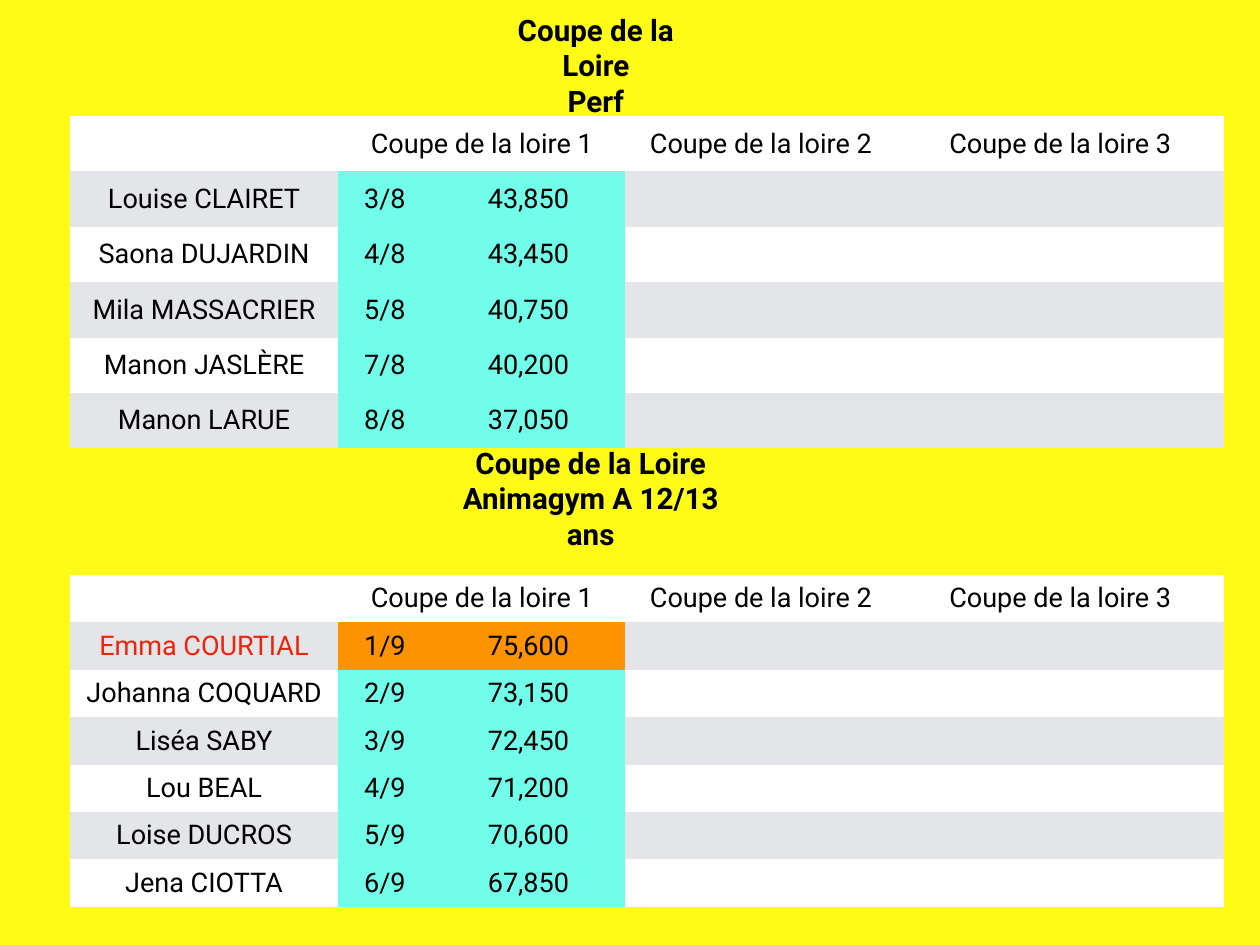
"""Build the Coupe de la Loire results slide with its two ranking tables."""
from pptx import Presentation
from pptx.dml.color import RGBColor
from pptx.enum.text import MSO_AUTO_SIZE as Fit, MSO_VERTICAL_ANCHOR as Anchor, PP_ALIGN as Align
from pptx.oxml.ns import qn
from pptx.util import Cm, Pt

YELLOW = RGBColor(0xFF, 0xFB, 0x17)
BLACK = RGBColor(0x00, 0x00, 0x00)
WHITE = RGBColor(0xFF, 0xFF, 0xFF)
GREY = RGBColor(0xE3, 0xE5, 0xE8)
AQUA = RGBColor(0x72, 0xFD, 0xEA)
ORANGE = RGBColor(0xFE, 0x93, 0x01)
RED = RGBColor(0xEE, 0x23, 0x0C)

NO_GRID = "{2D5ABB26-0587-4C30-8999-92F81FD0307C}"
COLUMNS = (7.7, 2.67, 5.56, 3.81, 3.96, 2.74, 6.65)
ROUNDS = ("Coupe de la loire 1", "Coupe de la loire 2", "Coupe de la loire 3")
PERF = (
    ("Louise CLAIRET", "3/8", "43,850"),
    ("Saona DUJARDIN", "4/8", "43,450"),
    ("Mila MASSACRIER", "5/8", "40,750"),
    ("Manon JASLÈRE", "7/8", "40,200"),
    ("Manon LARUE", "8/8", "37,050"),
)
ANIMAGYM = (
    ("Emma COURTIAL", "1/9", "75,600"),
    ("Johanna COQUARD", "2/9", "73,150"),
    ("Liséa SABY", "3/9", "72,450"),
    ("Lou BEAL", "4/9", "71,200"),
    ("Loise DUCROS", "5/9", "70,600"),
    ("Jena CIOTTA", "6/9", "67,850"),
)


def apply(target, values):
    for name, value in values.items():
        setattr(target, name, value)


class ResultsSlide:
    heading_font = {"name": "Roboto", "size": Pt(24), "bold": True}
    cell_font = {"name": "Roboto", "size": Pt(22), "bold": False}
    inset = {f"margin_{side}": Cm(0.15) for side in ("left", "right", "top", "bottom")}
    heading_frame = {**inset, "vertical_anchor": Anchor.MIDDLE, "word_wrap": False,
                     "auto_size": Fit.SHAPE_TO_FIT_TEXT}
    cell_frame = {**inset, "vertical_anchor": Anchor.MIDDLE}

    def __init__(self, deck):
        self.slide = deck.slides.add_slide(deck.slide_layouts[5])
        background = self.slide.background.fill
        background.solid()
        background.fore_color.rgb = YELLOW

    def lettering(self, frame, lines, font, color=BLACK):
        frame.text = "\n".join(lines)
        for paragraph in frame.paragraphs:
            paragraph.alignment = Align.CENTER
            apply(paragraph.font, font)
            for run in paragraph.runs:
                apply(run.font, font)
                run.font.color.rgb = color

    def heading(self, holder, left, top, width, category):
        box = {"left": Cm(left), "top": Cm(top), "width": Cm(width), "height": Cm(2.31)}
        apply(holder, box)
        apply(holder.text_frame, self.heading_frame)
        self.lettering(holder.text_frame, ("Coupe de la Loire", category), self.heading_font)

    def title(self, left, top, width, category):
        self.heading(self.slide.shapes.title, left, top, width, category)

    def subtitle(self, left, top, width, category):
        holder = self.slide.shapes.add_textbox(0, 0, Cm(width), Cm(2.31))
        self.heading(holder, left, top, width, category)

    def cell(self, cell, text, fill, color=BLACK):
        apply(cell, self.cell_frame)
        cell.fill.solid()
        cell.fill.fore_color.rgb = fill
        self.lettering(cell.text_frame, (text,), self.cell_font, color)

    def ranking(self, top, gymnasts):
        rows, height = len(gymnasts) + 1, 9.53
        frame = self.slide.shapes.add_table(
            rows, len(COLUMNS), Cm(2), Cm(top), Cm(sum(COLUMNS)), Cm(height))
        for style in frame.element.iter(qn("a:tableStyleId")):
            style.text = NO_GRID
        table = frame.table
        apply(table, {"first_row": False, "horz_banding": False})
        for column, width in zip(table.columns, COLUMNS):
            column.width = Cm(width)
        for row in table.rows:
            row.height = Cm(height / rows)

        for index in range(len(COLUMNS)):
            self.cell(table.cell(0, index), "", WHITE)
        for index, label in enumerate(ROUNDS):
            start = table.cell(0, 1 + 2 * index)
            start.merge(table.cell(0, 2 + 2 * index))
            self.cell(start, label, WHITE)

        for row, (name, rank, score) in enumerate(gymnasts, 1):
            winner = rank.startswith("1/")
            band = GREY if row % 2 else WHITE
            result = ORANGE if winner else AQUA
            self.cell(table.cell(row, 0), name, band, RED if winner else BLACK)
            self.cell(table.cell(row, 1), rank, result)
            self.cell(table.cell(row, 2), score, result)
            for index in range(3, len(COLUMNS)):
                self.cell(table.cell(row, index), "", band)


def main():
    deck = Presentation()
    apply(deck, {"slide_width": Cm(36.12), "slide_height": Cm(27.1)})
    results = ResultsSlide(deck)
    results.title(13.64, 0.71, 6.88, "Perf")
    results.ranking(3.33, PERF)
    results.subtitle(12.34, 13.13, 9.19, "Animagym A 12/13 ans")
    results.ranking(16.48, ANIMAGYM)
    deck.save("out.pptx")


if __name__ == "__main__":
    main()
